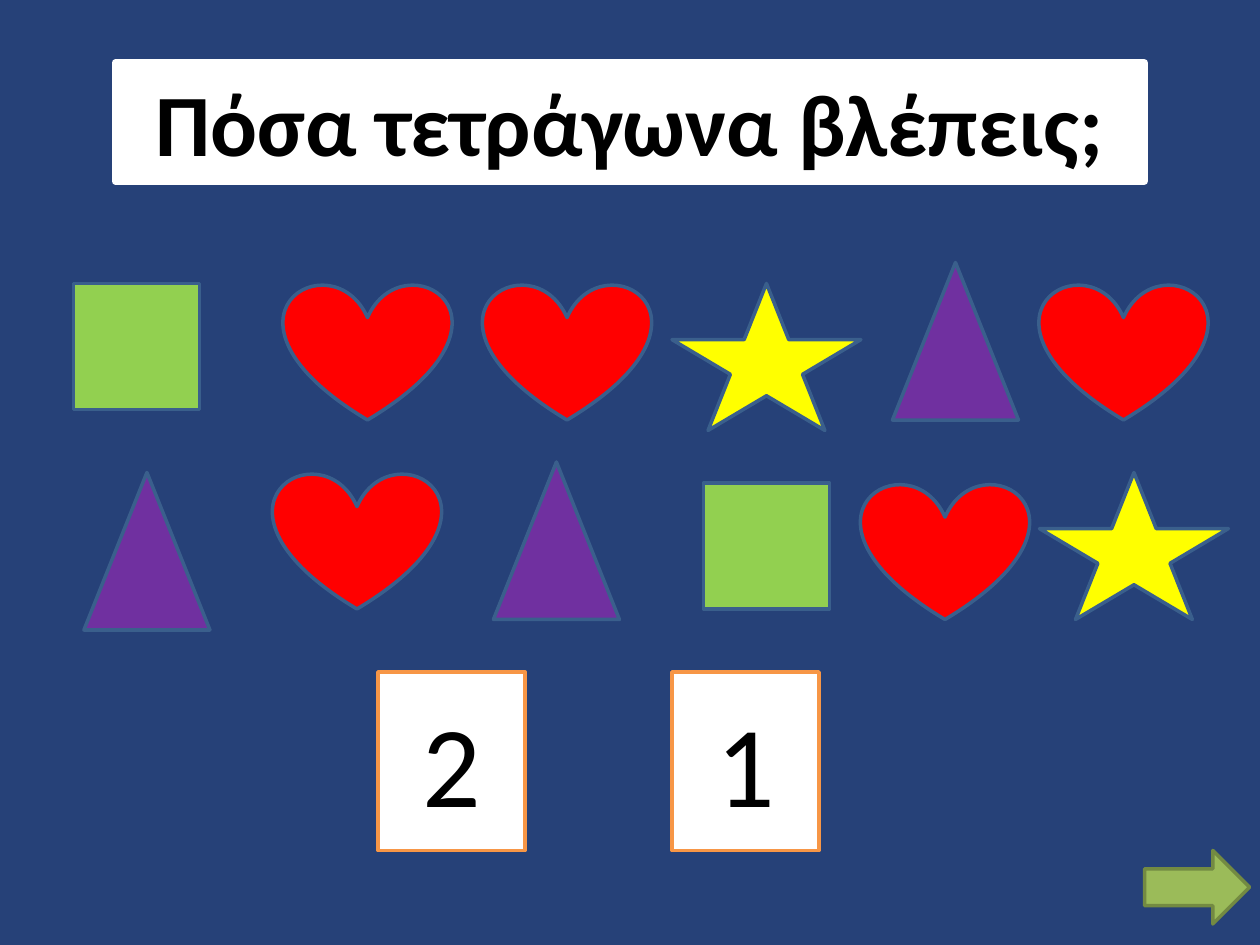
from pptx import Presentation, util as u
from pptx.dml.color import RGBColor
from pptx.enum import shapes, text

KIND = shapes.MSO_SHAPE
COLS, ROWS = 120, 90

THEME = {
    "font": "Calibri", "back": "264178", "ink": "000000", "white": "FFFFFF",
    "edge": "3A5F8C", "frame": "F79646", "go": "9BBB59", "rim": "738A42",
    "title": 50, "digit": 66, "thin": 2, "thick": 4.5,
}

FORMS = {
    "square": (KIND.RECTANGLE, 12, 12, "92D050"),
    "heart": (KIND.HEART, 16, 13, "FF0000"),
    "star": (KIND.STAR_5_POINT, 18, 14, "FFFF00"),
    "triangle": (KIND.ISOSCELES_TRIANGLE, 12, 15, "7030A0"),
}

ITEMS = [
    ("square", 7, 27), ("heart", 27, 27), ("heart", 46, 27),
    ("star", 64, 27), ("triangle", 85, 25), ("heart", 99, 27),
    ("triangle", 8, 45), ("heart", 26, 45), ("triangle", 47, 44),
    ("square", 67, 46), ("heart", 82, 46), ("star", 99, 45),
]

TITLE = "Πόσα τετράγωνα βλέπεις;"
ANSWERS = ["2", "1"]

deck = Presentation()
deck.slide_width, deck.slide_height = u.Inches(10), u.Inches(7.5)
slide = deck.slides.add_slide(deck.slide_layouts[6])
slide.background.fill.solid()
slide.background.fill.fore_color.rgb = RGBColor.from_string(THEME["back"])


def draw(kind, col, row, wide, high, fill, edge, width=THEME["thin"]):
    cell_w, cell_h = deck.slide_width / COLS, deck.slide_height / ROWS
    shape = slide.shapes.add_shape(
        kind, round(col * cell_w), round(row * cell_h),
        round(wide * cell_w), round(high * cell_h))
    shape.shadow.inherit = False
    shape.fill.solid()
    shape.fill.fore_color.rgb = RGBColor.from_string(fill)
    shape.line.color.rgb = RGBColor.from_string(edge)
    shape.line.width = u.Pt(width)
    return shape


def write(shape, words, size, anchor, bold=False):
    frame = shape.text_frame
    frame.word_wrap = True
    frame.vertical_anchor = anchor
    para = frame.paragraphs[0]
    para.text = words
    para.alignment = text.PP_ALIGN.CENTER
    font = para.font
    font.name, font.size, font.bold = THEME["font"], u.Pt(size), bold
    font.color.rgb = RGBColor.from_string(THEME["ink"])


head = draw(KIND.RECTANGLE, 11, 6, 98, 11.25,
            THEME["white"], THEME["white"], THEME["thick"])
write(head, TITLE, THEME["title"], text.MSO_ANCHOR.TOP, True)

for name, col, row in ITEMS:
    kind, wide, high, fill = FORMS[name]
    draw(kind, col, row, wide, high, fill, THEME["edge"])

for i, digit in enumerate(ANSWERS):
    card = draw(KIND.RECTANGLE, 36 + 28 * i, 64, 14, 17,
                THEME["white"], THEME["frame"])
    write(card, digit, THEME["digit"], text.MSO_ANCHOR.MIDDLE)

draw(KIND.RIGHT_ARROW, 109, 81, 10, 7, THEME["go"], THEME["rim"])

deck.save("out.pptx")
